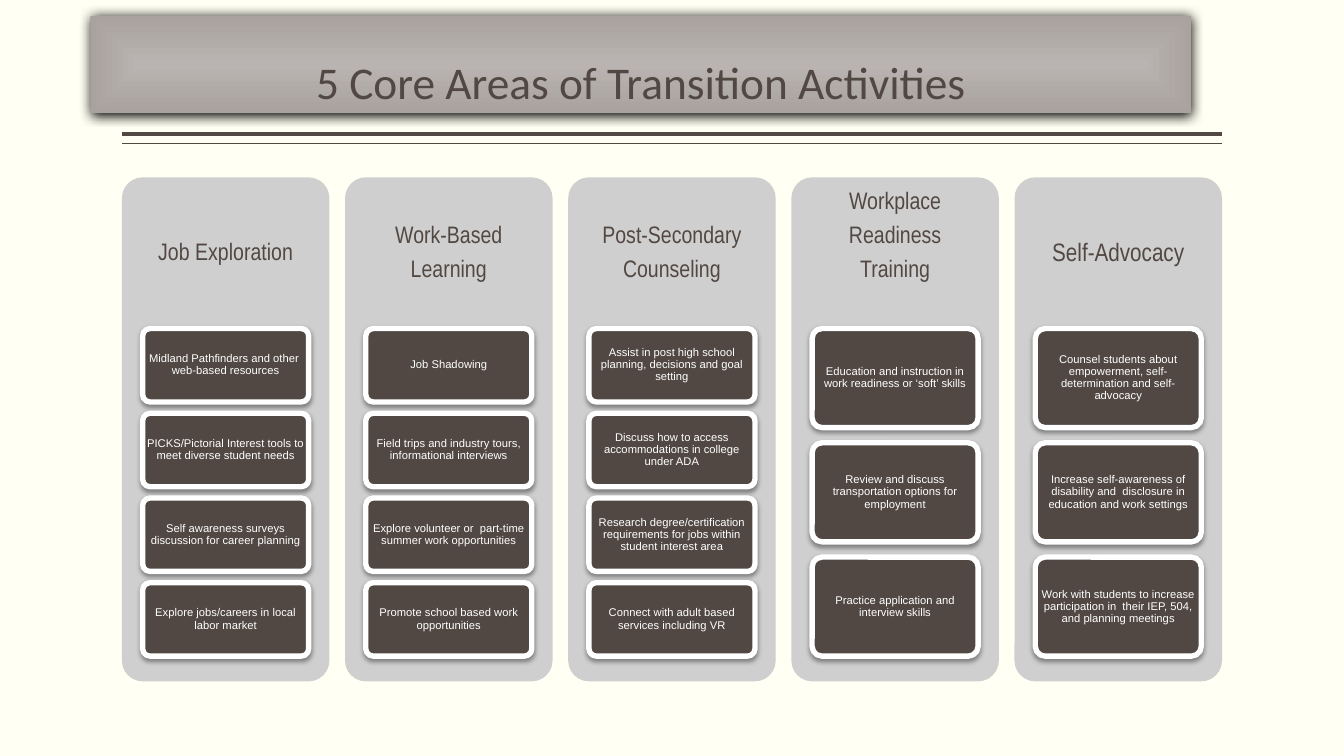
from dataclasses import dataclass

import pptx
from lxml import etree
from pptx import util as u
from pptx.dml import color
from pptx.enum import shapes, text
from pptx.oxml import ns

CREAM = color.RGBColor(0xFF, 0xFF, 0xF3)
BROWN = color.RGBColor(0x51, 0x48, 0x43)
GREY = color.RGBColor(0xD0, 0xCF, 0xCF)
WHITE = color.RGBColor(0xFF, 0xFF, 0xFF)
TITLE_INNER = color.RGBColor(0xB9, 0xB4, 0xB1)
TITLE_OUTER = color.RGBColor(0xA9, 0xA2, 0x9E)

COLUMN_LEFT, COLUMN_TOP = 87.1, 126.7
COLUMN_WIDTH, COLUMN_HEIGHT = 148.2, 360
COLUMN_PITCH = 159.4
HEADING_HEIGHT = 108
CARD_INSET, CARDS_HEIGHT = 14.8, 234
GAP_RATIO = 2 / 13
RULE_RIGHT = COLUMN_LEFT + 4 * COLUMN_PITCH + COLUMN_WIDTH


@dataclass
class Style:
    font: str
    size: float
    ink: color.RGBColor
    spacing: float = 0.9
    gap: float = 0
    margins: tuple[float, float, float, float] = (0, 0, 0, 0)
    anchor: text.MSO_ANCHOR = text.MSO_ANCHOR.MIDDLE


@dataclass
class Area:
    heading: list[str]
    cards: list[str]
    size: float = 17
    lift: float = 0


@dataclass
class Rule:
    y: float
    weight: float


RULES = [Rule(95.8, 3), Rule(102.6, 1)]
TITLE = Style("Calibri", 32.4, BROWN, 1, margins=(0, 3.6, 0, 3.6), anchor=text.MSO_ANCHOR.BOTTOM)
CARD = Style("Arial", 8, WHITE, margins=(1.4, 1.4, 1.4, 1.4))

AREAS = [
    Area(["Job Exploration"], [
        "Midland Pathfinders and other  web-based resources",
        "PICKS/Pictorial Interest tools to meet diverse student needs",
        "Self awareness surveys discussion for career planning",
        "Explore jobs/careers in local labor market",
    ]),
    Area(["Work-Based", "Learning"], [
        "Job Shadowing",
        "Field trips and industry tours, informational interviews",
        "Explore volunteer or  part-time summer work opportunities",
        "Promote school based work opportunities",
    ]),
    Area(["Post-Secondary", "Counseling"], [
        "Assist in post high school planning, decisions and goal setting",
        "Discuss how to access accommodations in college under ADA",
        "Research degree/certification requirements for jobs within student interest area",
        "Connect with adult based services including VR",
    ]),
    Area(["Workplace", "Readiness", "Training"], [
        "Education and instruction in work readiness or ‘soft’ skills",
        "Review and discuss transportation options for employment",
        "Practice application and interview skills",
    ], lift=24.4),
    Area(["Self-Advocacy"], [
        "Counsel students about empowerment, self-determination and self-advocacy",
        "Increase self-awareness of disability and  disclosure in education and work settings",
        "Work with students to increase participation in  their IEP, 504, and planning meetings",
    ], size=18),
]


def apply(target: object, values: dict[str, object]) -> None:
    for name, value in values.items():
        setattr(target, name, value)


def write(box, lines: list[str], style: Style) -> None:
    frame = box.text_frame
    left, top, right, bottom = map(u.Pt, style.margins)
    apply(frame, {
        "word_wrap": True, "vertical_anchor": style.anchor,
        "margin_left": left, "margin_top": top,
        "margin_right": right, "margin_bottom": bottom,
    })
    for index, line in enumerate(lines):
        para = frame.add_paragraph() if index else frame.paragraphs[0]
        apply(para, {
            "alignment": text.PP_ALIGN.CENTER, "line_spacing": style.spacing,
            "space_before": u.Pt(style.gap if index else 0), "space_after": u.Pt(0),
        })
        span = para.add_run()
        span.text = line
        apply(span.font, {"name": style.font, "size": u.Pt(style.size)})
        span.font.color.rgb = style.ink


def add_box(page, kind, left: float, top: float, width: float, height: float, fill: color.RGBColor):
    box = page.shapes.add_shape(kind, u.Pt(left), u.Pt(top), u.Pt(width), u.Pt(height))
    if kind == shapes.MSO_SHAPE.ROUNDED_RECTANGLE:
        box.adjustments[0] = 0.1
    box.fill.solid()
    box.fill.fore_color.rgb = fill
    box.line.fill.background()
    box.shadow.inherit = False
    return box


def add_shadow(box, blur: float, distance: float, opacity: int) -> None:
    effects = box.element.spPr.find(ns.qn("a:effectLst"))
    shadow = etree.SubElement(effects, ns.qn("a:outerShdw"), {
        "blurRad": str(u.Pt(blur)), "dist": str(u.Pt(distance)),
        "dir": "5400000", "algn": "ctr", "rotWithShape": "0",
    })
    ink = etree.SubElement(shadow, ns.qn("a:srgbClr"), val="000000")
    etree.SubElement(ink, ns.qn("a:alpha"), val=str(opacity * 1000))


def add_title(page) -> None:
    box = add_box(page, shapes.MSO_SHAPE.RECTANGLE, 64.6, 11.2, 786.2, 69.8, TITLE_OUTER)
    box.fill.gradient()
    for stop, ink, position in zip(box.fill.gradient_stops, (TITLE_INNER, TITLE_OUTER), (0, 1)):
        stop.color.rgb = ink
        stop.position = position
    gradient = box.element.spPr.find(ns.qn("a:gradFill"))
    gradient.remove(gradient.find(ns.qn("a:lin")))
    shade = etree.SubElement(gradient, ns.qn("a:path"), {"path": "rect"})
    etree.SubElement(shade, ns.qn("a:fillToRect"), dict.fromkeys("ltrb", "50000"))
    add_shadow(box, 8.5, 1, 100)
    write(box, ["5 Core Areas of Transition Activities"], TITLE)


def add_rule(page, rule: Rule) -> None:
    line = page.shapes.add_connector(
        shapes.MSO_CONNECTOR.STRAIGHT,
        u.Pt(RULE_RIGHT), u.Pt(rule.y), u.Pt(COLUMN_LEFT), u.Pt(rule.y))
    line.line.color.rgb = BROWN
    line.line.width = u.Pt(rule.weight)
    etree.SubElement(line.element.spPr, ns.qn("a:effectLst"))


def add_area(page, area: Area, left: float) -> None:
    rounded = shapes.MSO_SHAPE.ROUNDED_RECTANGLE
    add_box(page, rounded, left, COLUMN_TOP, COLUMN_WIDTH, COLUMN_HEIGHT, GREY)
    heading = page.shapes.add_textbox(
        u.Pt(left), u.Pt(COLUMN_TOP), u.Pt(COLUMN_WIDTH), u.Pt(HEADING_HEIGHT))
    write(heading, area.heading, Style(
        "Arial Narrow", area.size, BROWN, gap=6, margins=(5, 5, 5, 5 + area.lift)))
    count = len(area.cards)
    height = CARDS_HEIGHT / (count + (count - 1) * GAP_RATIO)
    for index, label in enumerate(area.cards):
        top = COLUMN_TOP + HEADING_HEIGHT + index * height * (1 + GAP_RATIO)
        card = add_box(page, rounded, left + CARD_INSET, top,
                       COLUMN_WIDTH - 2 * CARD_INSET, height, BROWN)
        card.line.color.rgb = WHITE
        card.line.width = u.Pt(3.82)
        add_shadow(card, 3.5, 2, 38)
        write(card, [label], CARD)


def main() -> None:
    deck = pptx.Presentation()
    apply(deck, {"slide_width": u.Pt(960), "slide_height": u.Pt(540)})
    page = deck.slides.add_slide(deck.slide_layouts[6])
    page.background.fill.solid()
    page.background.fill.fore_color.rgb = CREAM
    for rule in RULES:
        add_rule(page, rule)
    add_title(page)
    for index, area in enumerate(AREAS):
        add_area(page, area, COLUMN_LEFT + index * COLUMN_PITCH)
    deck.save("out.pptx")


if __name__ == "__main__":
    main()
